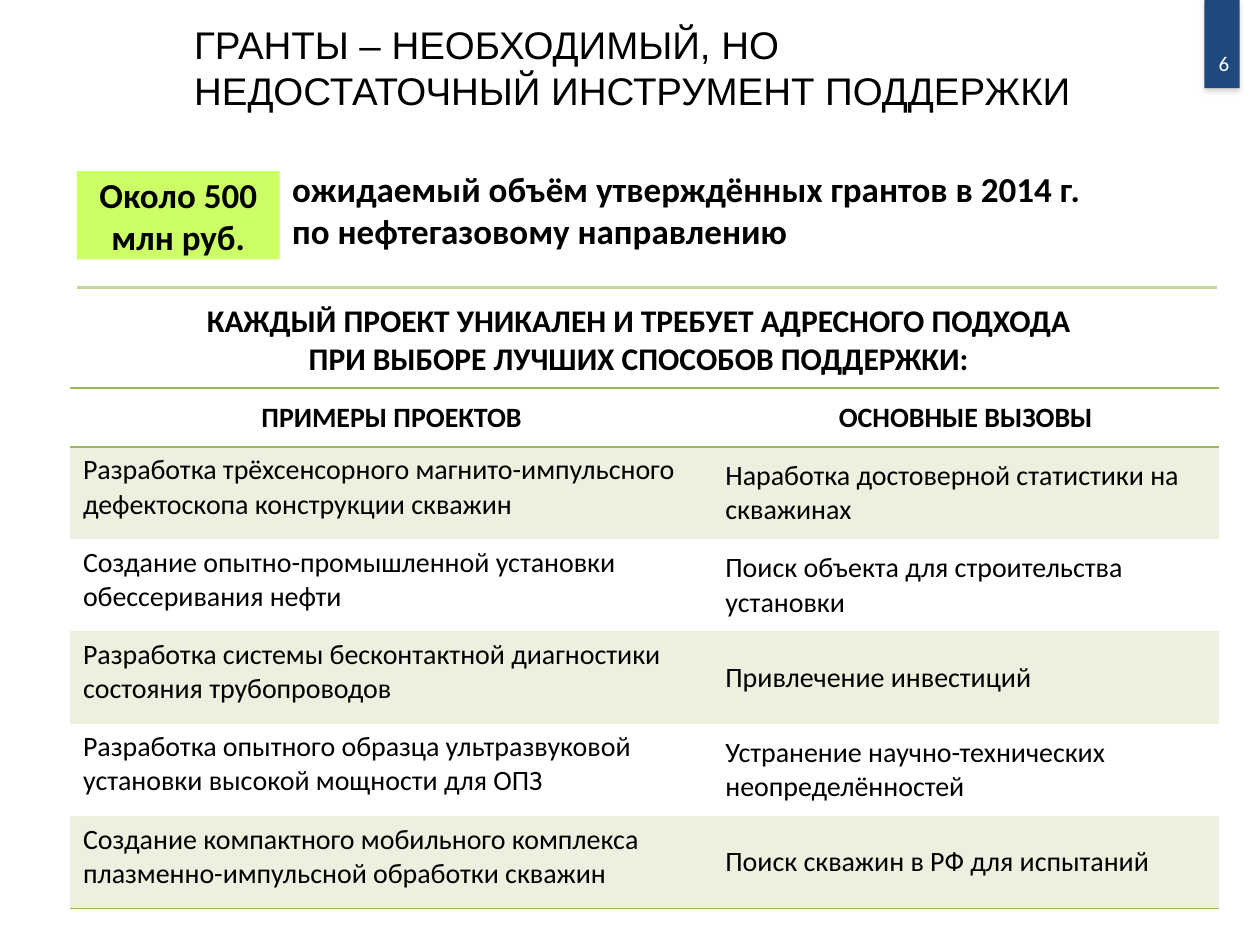
from lxml.etree import SubElement
from pptx import Presentation
from pptx.dml.color import RGBColor
from pptx.enum.shapes import MSO_CONNECTOR, MSO_SHAPE
from pptx.enum.text import MSO_ANCHOR, MSO_AUTO_SIZE, PP_ALIGN
from pptx.oxml import parse_xml
from pptx.oxml.ns import nsdecls, qn
from pptx.util import Cm, Pt

BLACK = RGBColor(0, 0, 0)
WHITE = RGBColor(255, 255, 255)
NAVY = RGBColor(0x1F, 0x49, 0x7D)
LIME = RGBColor(0xCC, 0xFF, 0x66)
GREEN = RGBColor(0x9B, 0xBB, 0x59)
SAGE = RGBColor(0xC3, 0xD6, 0x9B)
PALE = RGBColor(0xEB, 0xF1, 0xDE)

PLAIN = "{2D5ABB26-0587-4C30-8999-92F81FD0307C}"  # table style without grid
ROWS = [
    ("ПРИМЕРЫ ПРОЕКТОВ", "ОСНОВНЫЕ ВЫЗОВЫ"),
    ("Разработка трёхсенсорного магнито-импульсного дефектоскопа конструкции скважин",
     "Наработка достоверной статистики на скважинах"),
    ("Создание опытно-промышленной установки обессеривания нефти",
     "Поиск объекта для строительства установки"),
    ("Разработка системы бесконтактной диагностики состояния трубопроводов",
     "Привлечение инвестиций"),
    ("Разработка опытного образца ультразвуковой установки высокой мощности для ОПЗ",
     "Устранение научно-технических неопределённостей"),
    ("Создание компактного мобильного комплекса плазменно-импульсной обработки скважин",
     "Поиск скважин в РФ для испытаний"),
]


def write(frame, text, size, bold=False, color=BLACK, align=PP_ALIGN.LEFT,
          face="Calibri"):
    frame.text = text
    line = frame.paragraphs[0]
    line.alignment = align
    font = line.runs[0].font
    font.name, font.size, font.bold = face, Pt(size), bold
    font.color.rgb = color


def add_text(slide, box, text, size, anchor=MSO_ANCHOR.TOP, **style):
    frame = slide.shapes.add_textbox(*map(Cm, box)).text_frame
    frame.word_wrap = True
    frame.vertical_anchor = anchor
    write(frame, text, size, **style)


def add_block(slide, box, fill):
    block = slide.shapes.add_shape(MSO_SHAPE.RECTANGLE, *map(Cm, box))
    block.shadow.inherit = False
    block.fill.solid()
    block.fill.fore_color.rgb = fill
    block.line.fill.background()
    return block


def add_badge(slide, left, top, number):
    """Page number on a tab with a soft shadow."""
    tab = add_block(slide, (left, top, 0.71, 1.78), NAVY)
    effects = tab.element.spPr.find(qn("a:effectLst"))
    effects.append(parse_xml(
        f'<a:outerShdw {nsdecls("a")} blurRad="38100" dist="22860" dir="5400000" '
        'rotWithShape="0"><a:srgbClr val="808080"><a:alpha val="35000"/>'
        '</a:srgbClr></a:outerShdw>'))
    add_text(slide, (left - 0.15, top + 0.76, 1.09, 1.02), number, 12,
             MSO_ANCHOR.MIDDLE, color=WHITE, align=PP_ALIGN.CENTER)


def set_title(slide, box, text):
    title = slide.shapes.title
    title.left, title.top, title.width, title.height = map(Cm, box)
    frame = title.text_frame
    frame.auto_size = MSO_AUTO_SIZE.NONE
    frame.vertical_anchor = MSO_ANCHOR.MIDDLE
    write(frame, text, 22, face="Arial")


def add_lead(slide, left, top, width):
    """Highlighted sum, its meaning and the rule below."""
    mark = 4.09
    block = add_block(slide, (left, top + 0.2, mark, 1.78), LIME)
    block.text_frame.vertical_anchor = MSO_ANCHOR.MIDDLE
    write(block.text_frame, "Около 500 млн руб.", 20, bold=True,
          align=PP_ALIGN.CENTER)
    add_text(slide, (left + mark, top, 16.66, 1.96),
             "ожидаемый объём утверждённых грантов в 2014 г. "
             "по нефтегазовому направлению", 20, bold=True)
    level = Cm(top + 2.54)
    rule = slide.shapes.add_connector(
        MSO_CONNECTOR.STRAIGHT, Cm(left), level, Cm(left + width), level)
    rule.line.color.rgb = SAGE
    rule.line.width = Pt(1.5)
    SubElement(rule.element.spPr, qn("a:effectLst"))


def set_edges(cell, sides):
    props = cell._tc.get_or_add_tcPr()
    for i, side in enumerate(sides):
        props.insert(i, parse_xml(
            f'<a:ln{side} {nsdecls("a")} w="12700"><a:solidFill>'
            f'<a:srgbClr val="{GREEN}"/></a:solidFill></a:ln{side}>'))


def add_grid(slide, left, top, widths, head, row):
    last = len(ROWS) - 1
    frame = slide.shapes.add_table(
        len(ROWS), len(widths), Cm(left), Cm(top),
        Cm(sum(widths)), Cm(head + row * last))
    table = frame.table
    table.first_row = table.horz_banding = False
    table._tbl.tblPr.find(qn("a:tableStyleId")).text = PLAIN
    for col, width in zip(table.columns, widths):
        col.width = Cm(width)
    for r, texts in enumerate(ROWS):
        table.rows[r].height = Cm(row if r else head)
        for c, text in enumerate(texts):
            cell = table.cell(r, c)
            write(cell.text_frame, text, 16, bold=r == 0,
                  align=PP_ALIGN.LEFT if r else PP_ALIGN.CENTER)
            high = r > 0 and c == 0
            cell.vertical_anchor = MSO_ANCHOR.TOP if high else MSO_ANCHOR.MIDDLE
            if r % 2:
                cell.fill.solid()
                cell.fill.fore_color.rgb = PALE
            else:
                cell.fill.background()
            set_edges(cell, {0: "TB", last: "B"}.get(r, ""))


def main():
    deck = Presentation()
    deck.slide_width, deck.slide_height = Cm(25.4), Cm(19.05)
    slide = deck.slides.add_slide(deck.slide_layouts[5])
    add_badge(slide, 24.28, 0, "6")
    set_title(slide, (3.66, 0.25, 19.38, 2.21),
              "ГРАНТЫ – НЕОБХОДИМЫЙ, НО НЕДОСТАТОЧНЫЙ ИНСТРУМЕНТ ПОДДЕРЖКИ")
    add_lead(slide, 1.55, 3.25, 22.98)
    add_text(slide, (3.71, 5.94, 18.34, 1.8),
             "КАЖДЫЙ ПРОЕКТ УНИКАЛЕН И ТРЕБУЕТ АДРЕСНОГО ПОДХОДА "
             "ПРИ ВЫБОРЕ ЛУЧШИХ СПОСОБОВ ПОДДЕРЖКИ:", 18,
             bold=True, align=PP_ALIGN.CENTER)
    add_grid(slide, 1.42, 7.82, (12.95, 10.2), 1.19, 1.86)
    deck.save("out.pptx")


if __name__ == "__main__":
    main()
